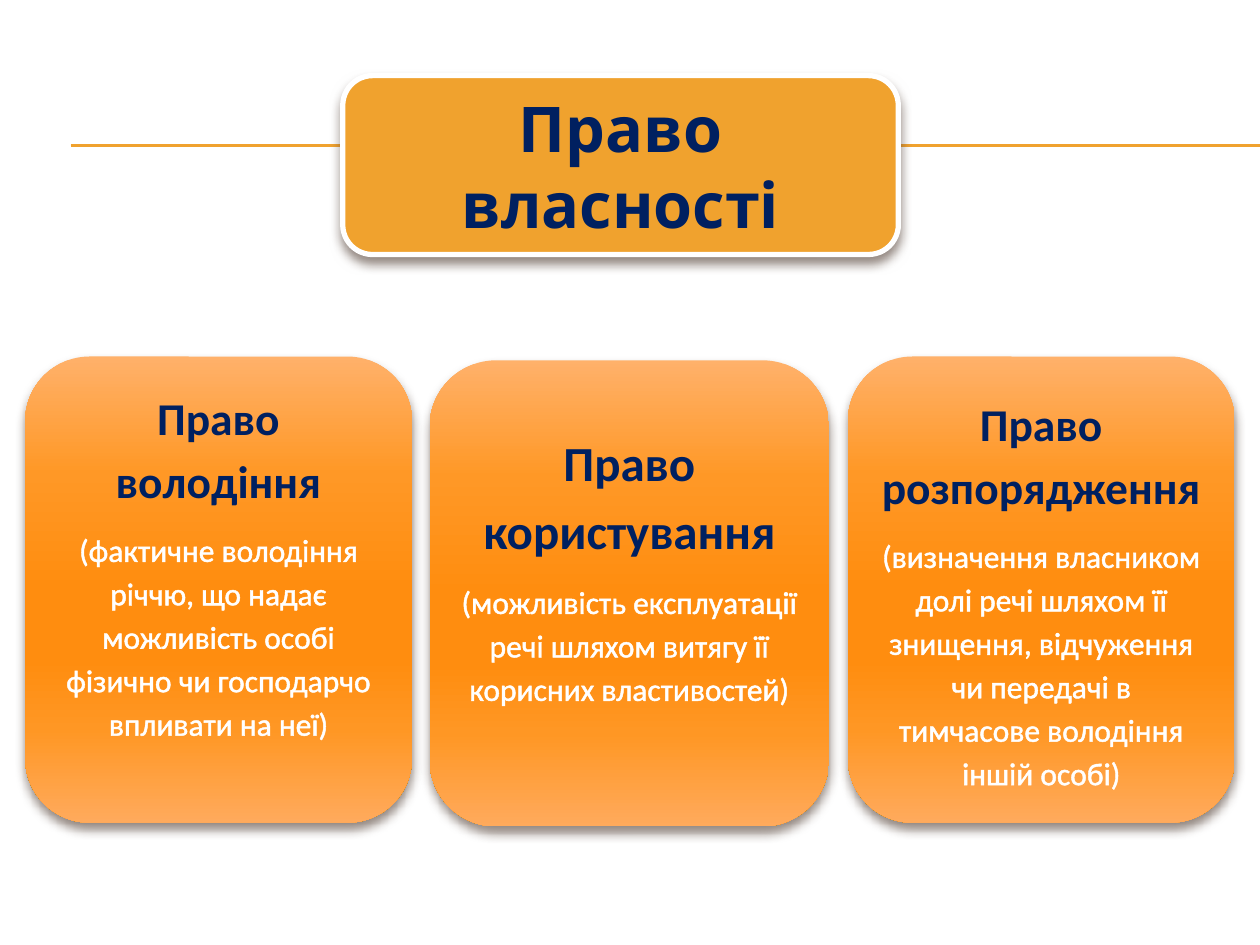
from lxml import etree
from pptx import Presentation
from pptx.dml.color import RGBColor
from pptx.enum.shapes import MSO_CONNECTOR, MSO_SHAPE
from pptx.enum.text import MSO_ANCHOR, PP_ALIGN
from pptx.oxml.ns import qn
from pptx.util import Inches, Pt

ROUNDED = MSO_SHAPE.ROUNDED_RECTANGLE
STRAIGHT = MSO_CONNECTOR.STRAIGHT
MIDDLE = MSO_ANCHOR.MIDDLE
CENTER = PP_ALIGN.CENTER

COLORS = {"gold": "F0A22E", "white": "FFFFFF", "navy": "002060", "shadow": "4E3B30"}
CARD_GRADIENT = {0: "FFB16A", 25: "FF9826", 50: "FF8D0F",
                 65: "FF8D0F", 80: "FF9724", 100: "FFAA5C"}
CARD_SPACING = {"line_spacing": 1.15, "space_after": Pt(10)}
CARD_HEIGHT = 3.7

# left, top, width, bottom inset, heading size, heading, explanation
CARDS = [
    (0.2, 2.83, 3.07, 0.49, 26, "Право володіння",
     "(фактичне володіння річчю, що надає можливість особі фізично чи "
     "господарчо впливати на неї)"),
    (3.41, 2.86, 3.17, 0.49, 28, "Право користування",
     "(можливість експлуатації речі шляхом витягу її корисних властивостей)"),
    (6.73, 2.83, 3.07, 0.05, 26, "Право розпорядження",
     "(визначення власником долі речі шляхом її знищення, відчуження чи "
     "передачі в тимчасове володіння іншій особі)"),
]


def add_child(parent, tag, **attributes):
    child = etree.SubElement(parent, qn(tag))
    for name, value in attributes.items():
        child.set(name, str(value))
    return child


def apply_format(target, values):
    for name, value in values.items():
        setattr(target, name, value)


class SlideBuilder:
    def __init__(self, page):
        self.page = page

    def rule(self, left, right, top):
        line = self.page.shapes.add_connector(
            STRAIGHT, Inches(left), Inches(top), Inches(right), Inches(top))
        line.line.color.rgb = RGBColor.from_string(COLORS["gold"])
        line.line.width = Pt(0.75)
        add_child(line._element.spPr, "a:effectLst")

    def rounded_box(self, left, top, width, height, bottom_inset=0.05):
        box = self.page.shapes.add_shape(
            ROUNDED, Inches(left), Inches(top), Inches(width), Inches(height))
        apply_format(box.text_frame, {"word_wrap": True, "vertical_anchor": MIDDLE,
                                      "margin_bottom": Inches(bottom_inset)})
        return box

    def drop_shadow(self, box):
        """Call after fill and line, since effects follow them in the XML."""
        box.shadow.inherit = False
        effects = box._element.spPr.find(qn("a:effectLst"))
        shadow = add_child(effects, "a:outerShdw", blurRad=Pt(6), dist=Pt(4),
                           dir=5400000, rotWithShape=0)
        color = add_child(shadow, "a:srgbClr", val=COLORS["shadow"])
        add_child(color, "a:alpha", val=60000)

    def gradient(self, box, stops):
        box.fill.gradient()
        box.fill.gradient_angle = 270
        stop_list = box._element.spPr.find(qn("a:gradFill")).find(qn("a:gsLst"))
        for stop in list(stop_list):
            stop_list.remove(stop)
        for percent, color in stops.items():
            stop = add_child(stop_list, "a:gs", pos=percent * 1000)
            add_child(stop, "a:srgbClr", val=color)

    def text(self, para, words, color, font, spacing=None):
        para.alignment = CENTER
        apply_format(para, spacing or {})
        span = para.add_run()
        span.text = words
        apply_format(span.font, font)
        span.font.color.rgb = RGBColor.from_string(COLORS[color])
        return span

    def outline(self, span, color, points):
        line = etree.Element(qn("a:ln"), w=str(Pt(points)))
        add_child(add_child(line, "a:solidFill"), "a:srgbClr", val=COLORS[color])
        span.font._element.insert(0, line)

    def title(self, words):
        box = self.rounded_box(2.72, 0.6, 4.41, 1.42)
        box.fill.solid()
        box.fill.fore_color.rgb = RGBColor.from_string(COLORS["gold"])
        box.line.color.rgb = RGBColor.from_string(COLORS["white"])
        box.line.width = Pt(3)
        self.drop_shadow(box)
        self.text(box.text_frame.paragraphs[0], words, "navy",
                  {"size": Pt(36), "name": "Cabin", "bold": True})

    def card(self, left, top, width, bottom_inset, heading_size, heading, explanation):
        box = self.rounded_box(left, top, width, CARD_HEIGHT, bottom_inset)
        self.gradient(box, CARD_GRADIENT)
        box.line.fill.background()
        self.drop_shadow(box)
        frame = box.text_frame
        self.text(frame.paragraphs[0], heading, "navy",
                  {"size": Pt(heading_size), "name": "Calibri", "bold": True},
                  CARD_SPACING)
        span = self.text(frame.add_paragraph(), explanation, "white",
                         {"size": Pt(18), "name": "Calibri", "bold": False},
                         CARD_SPACING)
        self.outline(span, "white", 1.45)


def main():
    deck = Presentation()
    deck.slide_width, deck.slide_height = Inches(10), Inches(7.5)
    builder = SlideBuilder(deck.slides.add_slide(deck.slide_layouts[6]))
    for top in (1.15, 1.16):
        builder.rule(0.56, 10, top)
    builder.title("Право власності")
    for card in CARDS:
        builder.card(*card)
    deck.save("out.pptx")


if __name__ == "__main__":
    main()
